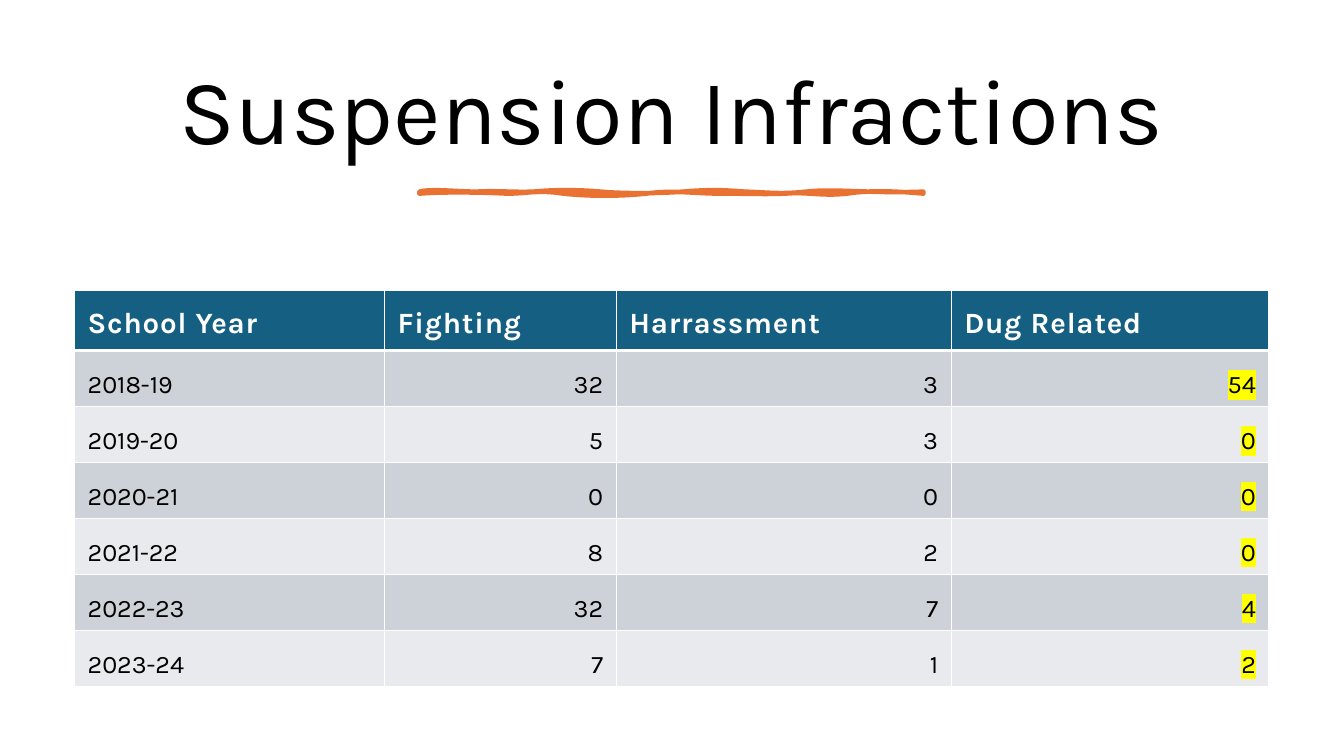
from dataclasses import dataclass
from itertools import chain

from lxml.etree import SubElement
from pptx import Presentation
from pptx.dml.color import RGBColor
from pptx.enum.text import MSO_ANCHOR, PP_ALIGN
from pptx.oxml.ns import qn
from pptx.util import Cm, Pt


@dataclass(frozen=True)
class Theme:
    font: str = "Karla"
    ink: str = "000000"
    white: str = "FFFFFF"
    accent: str = "E97132"
    header: str = "156082"
    bands: tuple = ("CCD2D8", "E8EAED")
    highlight: str = "FFFF00"
    title_size: float = 66
    header_size: float = 21
    body_size: float = 18
    header_spacing: float = 0.6
    stroke: float = 3.25
    grid: float = 1
    header_rule: float = 3


THEME = Theme()

HEADERS = ("School Year", "Fighting", "Harrassment", "Dug Related")
INFRACTIONS = (
    ("2018-19", 32, 3, 54),
    ("2019-20", 5, 3, 0),
    ("2020-21", 0, 0, 0),
    ("2021-22", 8, 2, 0),
    ("2022-23", 32, 7, 4),
    ("2023-24", 7, 1, 2),
)
COLUMN_WIDTHS = (7.81, 5.84, 8.44, 8.01)
HEADER_HEIGHT, ROW_HEIGHT = 1.51, 1.41

# Bézier segments in centimetres: two control points and an end point.
STROKE_START = (10.57, 4.83)
STROKE_CURVES = (
    ((10.87, 4.75), (11.53, 4.83), (12.01, 4.83)),
    ((12.5, 4.8), (12.93, 4.85), (13.44, 4.83)),
    ((13.94, 4.78), (14.58, 4.78), (15.14, 4.83)),
    ((15.67, 4.88), (16.59, 4.88), (17.2, 4.83)),
    ((17.83, 4.78), (18.14, 4.78), (18.77, 4.83)),
    ((19.38, 4.85), (19.66, 4.9), (20.32, 4.83)),
    ((20.98, 4.75), (22.02, 4.88), (23.27, 4.83)),
    ((23.29, 4.85), (23.27, 4.85), (23.27, 4.88)),
    ((22.73, 4.83), (21.97, 4.78), (21.34, 4.88)),
    ((20.7, 4.95), (20.35, 4.83), (19.79, 4.88)),
    ((19.2, 4.9), (18.97, 4.88), (18.21, 4.88)),
    ((17.45, 4.88), (16.97, 4.78), (16.28, 4.88)),
    ((15.6, 4.95), (14.86, 4.95), (14.2, 4.88)),
    ((13.56, 4.78), (13.28, 4.88), (12.78, 4.88)),
    ((12.27, 4.85), (11.13, 4.83), (10.57, 4.88)),
)


def color(code):
    return RGBColor.from_string(code)


def add_run(para, text, size, ink, bold=False, spacing=0, highlight=None):
    span = para.add_run()
    span.text = text
    span.font.size = Pt(size)
    span.font.bold = bold
    span.font.color.rgb = color(ink)
    properties = span.font._element
    if spacing:
        properties.set("spc", str(round(spacing * 100)))
    if highlight:
        mark = SubElement(properties, qn("a:highlight"))
        SubElement(mark, qn("a:srgbClr"), val=highlight)
    span.font.name = THEME.font


def add_title(page, text):
    box = page.shapes.add_textbox(Cm(1.78), Cm(1.15), Cm(30.3), Cm(3.48))
    frame = box.text_frame
    frame.word_wrap = True
    frame.vertical_anchor = MSO_ANCHOR.MIDDLE
    para = frame.paragraphs[0]
    para.alignment = PP_ALIGN.CENTER
    para.line_spacing = 0.9
    add_run(para, text, THEME.title_size, THEME.ink)


def bend_segments(shape):
    """Turn every three straight segments of a freeform into one Bézier curve."""
    segments = list(shape._element.iter(qn("a:lnTo")))
    for first, second, end in zip(segments[::3], segments[1::3], segments[2::3]):
        first.tag = qn("a:cubicBezTo")
        for segment in (second, end):
            first.append(segment[0])
            segment.getparent().remove(segment)


def add_brush_stroke(page):
    builder = page.shapes.build_freeform(*(Cm(value) for value in STROKE_START))
    points = [(Cm(x), Cm(y)) for x, y in chain.from_iterable(STROKE_CURVES)]
    builder.add_line_segments(points, close=True)
    stroke = builder.convert_to_shape()
    bend_segments(stroke)
    stroke.shadow.inherit = False
    stroke.fill.solid()
    stroke.fill.fore_color.rgb = color(THEME.accent)
    stroke.line.color.rgb = color(THEME.accent)
    stroke.line.width = Pt(THEME.stroke)


def set_borders(cell, top, bottom):
    properties = cell._tc.get_or_add_tcPr()
    widths = {"lnL": THEME.grid, "lnR": THEME.grid, "lnT": top, "lnB": bottom}
    for side, width in widths.items():
        line = SubElement(properties, qn(f"a:{side}"), w=str(Pt(width)))
        fill = SubElement(line, qn("a:solidFill"))
        SubElement(fill, qn("a:srgbClr"), val=THEME.white)


def style_cell(cell, fill, anchor, top, bottom):
    set_borders(cell, top, bottom)
    cell.fill.solid()
    cell.fill.fore_color.rgb = color(fill)
    cell.vertical_anchor = anchor
    cell.margin_left = cell.margin_right = cell.margin_top = Cm(0.33)
    cell.margin_bottom = Cm(0.17)


def add_infractions_table(page):
    heights = [HEADER_HEIGHT] + [ROW_HEIGHT] * len(INFRACTIONS)
    table = page.shapes.add_table(
        len(heights), len(HEADERS), Cm(1.88), Cm(7.32),
        Cm(sum(COLUMN_WIDTHS)), Cm(sum(heights)),
    ).table
    table.horz_banding = False
    for column, width in zip(table.columns, COLUMN_WIDTHS):
        column.width = Cm(width)
    for row, height in zip(table.rows, heights):
        row.height = Cm(height)

    for column, text in enumerate(HEADERS):
        cell = table.cell(0, column)
        style_cell(cell, THEME.header, MSO_ANCHOR.MIDDLE, THEME.grid, THEME.header_rule)
        add_run(cell.text_frame.paragraphs[0], text, THEME.header_size, THEME.white,
                bold=True, spacing=THEME.header_spacing)

    last_column = len(HEADERS) - 1
    for row, record in enumerate(INFRACTIONS, start=1):
        top = THEME.header_rule if row == 1 else THEME.grid
        for column, value in enumerate(record):
            cell = table.cell(row, column)
            style_cell(cell, THEME.bands[(row - 1) % 2], MSO_ANCHOR.BOTTOM, top, THEME.grid)
            para = cell.text_frame.paragraphs[0]
            para.alignment = PP_ALIGN.RIGHT if column else PP_ALIGN.LEFT
            add_run(para, str(value), THEME.body_size, THEME.ink,
                    highlight=THEME.highlight if column == last_column else None)


def main():
    deck = Presentation()
    deck.slide_width, deck.slide_height = Cm(33.87), Cm(19.05)
    page = deck.slides.add_slide(deck.slide_layouts[6])
    add_title(page, "Suspension Infractions")
    add_brush_stroke(page)
    add_infractions_table(page)
    deck.save("out.pptx")


if __name__ == "__main__":
    main()
